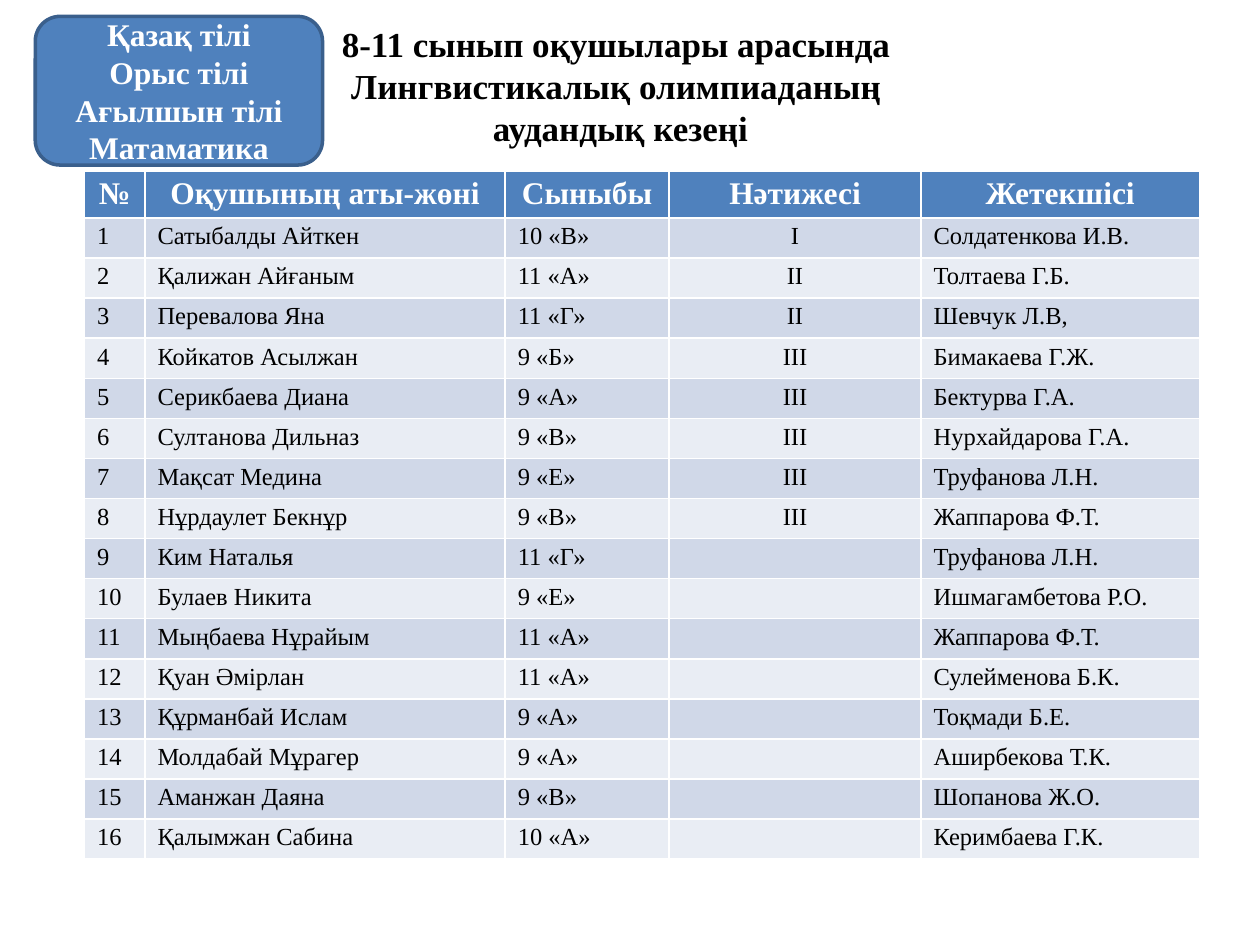
from dataclasses import dataclass

from pptx import Presentation
from pptx.dml.color import RGBColor
from pptx.enum import shapes, text
from pptx.util import Inches, Pt


@dataclass(frozen=True)
class Theme:
    font: str = "Times New Roman"
    blue: str = "4F81BD"
    outline: str = "3A5F8C"
    bands: tuple = ("D0D8E8", "E9EDF4")
    black: str = "000000"
    white: str = "FFFFFF"
    title_size: int = 20
    heading_size: int = 18
    body_size: int = 14


THEME = Theme()
CENTER = text.PP_ALIGN.CENTER
LEFT = text.PP_ALIGN.LEFT

TITLE = "8-11 сынып оқушылары арасында \vЛингвистикалық олимпиаданың \vаудандық кезеңі"
SUBJECTS = ["Қазақ тілі", "Орыс тілі", "Ағылшын тілі", "Матаматика"]
HEADER = ["№", "Оқушының аты-жөні", "Сыныбы", "Нәтижесі", "Жетекшісі"]
COLUMN_WIDTHS = [0.48, 2.86, 1.3, 2, 2.21]
RESULT_COLUMN = HEADER.index("Нәтижесі")
STUDENTS = [
    ("Сатыбалды Айткен", "10 «В»", "І", "Солдатенкова И.В."),
    ("Қалижан Айғаным", "11 «А»", "ІІ", "Толтаева Г.Б."),
    ("Перевалова Яна", "11 «Г»", "ІІ", "Шевчук Л.В,"),
    ("Койкатов Асылжан", "9 «Б»", "ІІІ", "Бимакаева Г.Ж."),
    ("Серикбаева Диана", "9 «А»", "ІІІ", "Бектурва Г.А."),
    ("Султанова Дильназ", "9 «В»", "ІІІ", "Нурхайдарова Г.А."),
    ("Мақсат Медина", "9 «Е»", "ІІІ", "Труфанова Л.Н."),
    ("Нұрдаулет Бекнұр", "9 «В»", "ІІІ", "Жаппарова Ф.Т."),
    ("Ким Наталья", "11 «Г»", "", "Труфанова Л.Н."),
    ("Булаев Никита", "9 «Е»", "", "Ишмагамбетова Р.О."),
    ("Мыңбаева Нұрайым", "11 «А»", "", "Жаппарова Ф.Т."),
    ("Қуан Әмірлан", "11 «А»", "", "Сулейменова Б.К."),
    ("Құрманбай Ислам", "9 «А»", "", "Тоқмади Б.Е."),
    ("Молдабай Мұрагер", "9 «А»", "", "Аширбекова Т.К."),
    ("Аманжан Даяна", "9 «В»", "", "Шопанова Ж.О."),
    ("Қалымжан Сабина", "10 «А»", "", "Керимбаева Г.К."),
]


def set_format(target, values):
    for name, value in values.items():
        setattr(target, name, value)


def fill_solid(target, color):
    target.fill.solid()
    target.fill.fore_color.rgb = RGBColor.from_string(color)


def write_text(frame, content, size, color, bold=False, align=CENTER):
    """Put the content in the frame, one paragraph per line."""
    frame.text = content
    for paragraph in frame.paragraphs:
        paragraph.alignment = align
        for run in paragraph.runs:
            set_format(run.font, {"name": THEME.font, "size": Pt(size), "bold": bold})
            run.font.color.rgb = RGBColor.from_string(color)
        if not paragraph.runs:
            # An empty cell must not be taller than its row
            paragraph._p.get_or_add_endParaRPr().set("sz", str(size * 100))


def add_title(slide):
    title = slide.shapes.title
    set_format(title, {"left": Inches(0.35), "top": Inches(0.13),
                       "width": Inches(9.15), "height": Inches(1.42)})
    write_text(title.text_frame, TITLE, THEME.title_size, THEME.black, bold=True)
    set_format(title.text_frame, {"vertical_anchor": text.MSO_ANCHOR.MIDDLE,
                                  "word_wrap": True, "margin_bottom": Inches(0.38)})


def add_results_table(slide):
    left, top, bottom, header_height = 0.67, 1.36, 6.82, 0.37
    rows = [HEADER] + [(str(number), *student)
                       for number, student in enumerate(STUDENTS, 1)]
    table = slide.shapes.add_table(
        len(rows), len(HEADER), Inches(left), Inches(top),
        Inches(sum(COLUMN_WIDTHS)), Inches(bottom - top)).table
    for column, width in zip(table.columns, COLUMN_WIDTHS):
        column.width = Inches(width)

    body_height = (bottom - top - header_height) / len(STUDENTS)
    for row_index, values in enumerate(rows):
        is_header = row_index == 0
        table.rows[row_index].height = Inches(header_height if is_header else body_height)
        for column_index, value in enumerate(values):
            cell = table.cell(row_index, column_index)
            set_format(cell, {"margin_top": Inches(0.04), "margin_bottom": Inches(0.04)})
            if is_header:
                fill_solid(cell, THEME.blue)
                write_text(cell.text_frame, value, THEME.heading_size, THEME.white, bold=True)
            else:
                fill_solid(cell, THEME.bands[(row_index - 1) % 2])
                align = CENTER if column_index == RESULT_COLUMN else LEFT
                write_text(cell.text_frame, value, THEME.body_size, THEME.black, align=align)


def add_subjects_box(slide):
    box = slide.shapes.add_shape(
        shapes.MSO_SHAPE.ROUNDED_RECTANGLE,
        Inches(0.28), Inches(0.13), Inches(2.28), Inches(1.18))
    box.shadow.inherit = False
    fill_solid(box, THEME.blue)
    box.line.color.rgb = RGBColor.from_string(THEME.outline)
    box.line.width = Pt(2)
    box.text_frame.vertical_anchor = text.MSO_ANCHOR.MIDDLE
    write_text(box.text_frame, "\n".join(SUBJECTS), THEME.heading_size, THEME.white, bold=True)


def main():
    presentation = Presentation()
    presentation.slide_width = Inches(10)
    presentation.slide_height = Inches(7.5)
    title_only = presentation.slide_layouts.get_by_name("Title Only")
    slide = presentation.slides.add_slide(title_only)

    # Heading, results and subjects, from back to front
    add_title(slide)
    add_results_table(slide)
    add_subjects_box(slide)
    presentation.save("out.pptx")


if __name__ == "__main__":
    main()
